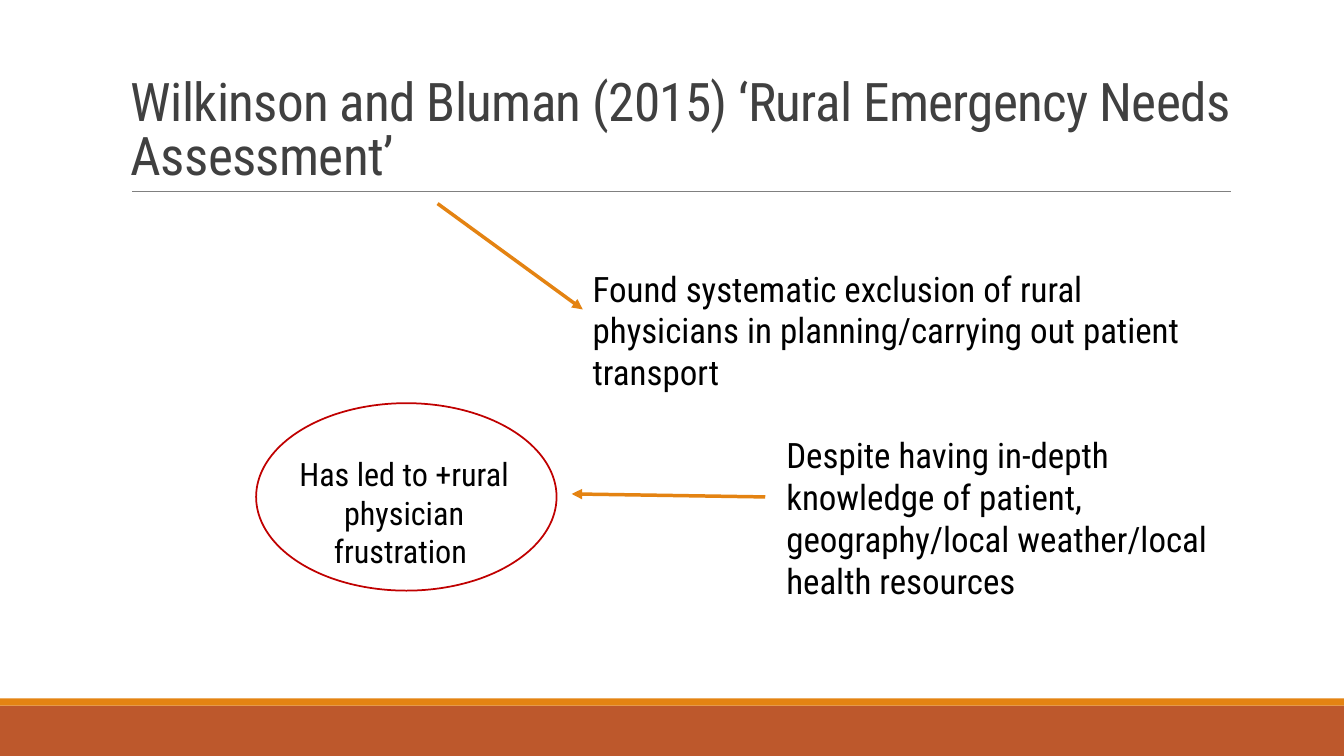
from lxml import etree
from pptx import Presentation
from pptx.dml.color import RGBColor
from pptx.enum.shapes import MSO_CONNECTOR, MSO_SHAPE
from pptx.enum.text import MSO_ANCHOR, MSO_AUTO_SIZE, PP_ALIGN
from pptx.oxml.ns import qn
from pptx.util import Inches, Pt

RECT, OVAL = MSO_SHAPE.RECTANGLE, MSO_SHAPE.OVAL
STRAIGHT = MSO_CONNECTOR.STRAIGHT
TOP, BOTTOM = MSO_ANCHOR.TOP, MSO_ANCHOR.BOTTOM
LEFT, CENTER = PP_ALIGN.LEFT, PP_ALIGN.CENTER
GROW, FIXED = MSO_AUTO_SIZE.SHAPE_TO_FIT_TEXT, MSO_AUTO_SIZE.NONE

RUST, ORANGE, RED = "BD582C", "E48312", "C00000"
GRAY, DARK, BLACK = "808080", "404040", "000000"


def rgb(value):
    return RGBColor.from_string(value)


class SlideBuilder:
    font = "Roboto Condensed"

    def __init__(self, slide):
        self.s = slide

    def shape(self, kind, box, fill=None, line=None, width=1):
        sp = self.s.shapes.add_shape(kind, *map(Inches, box))
        sp.shadow.inherit = False
        if fill:
            sp.fill.solid()
            sp.fill.fore_color.rgb = rgb(fill)
        else:
            sp.fill.background()
        if line:
            sp.line.color.rgb = rgb(line)
            sp.line.width = Pt(width)
        else:
            sp.line.fill.background()

    def line(self, start, end, color, width, arrow=False):
        cx = self.s.shapes.add_connector(STRAIGHT, *map(Inches, start + end))
        cx.line.color.rgb = rgb(color)
        cx.line.width = Pt(width)
        if arrow:
            ln = cx.line._get_or_add_ln()
            etree.SubElement(ln, qn("a:tailEnd"), type="triangle")
        etree.SubElement(cx._element.spPr, qn("a:effectLst"))

    def text(self, box, text, size, color=BLACK, align=LEFT, anchor=TOP,
             fit=GROW, leading=None, tracking=None):
        tf = self.s.shapes.add_textbox(*map(Inches, box)).text_frame
        p = tf.paragraphs[0]
        r = p.add_run()
        r.text = text
        formats = (
            (tf, {"word_wrap": True, "auto_size": fit,
                  "vertical_anchor": anchor}),
            (p, {"alignment": align, "line_spacing": leading}),
            (r.font, {"name": self.font, "size": Pt(size)}),
        )
        for target, values in formats:
            for name, value in values.items():
                setattr(target, name, value)
        r.font.color.rgb = rgb(color)
        if tracking:
            r._r.get_or_add_rPr().set("spc", str(round(tracking * 100)))


def main():
    prs = Presentation()
    prs.slide_width, prs.slide_height = Inches(13.33), Inches(7.5)
    b = SlideBuilder(prs.slides.add_slide(prs.slide_layouts[6]))

    # Footer bands and title rule
    b.shape(RECT, (0, 7, 13.33, 0.5), fill=RUST)
    b.shape(RECT, (0, 6.93, 13.33, 0.07), fill=ORANGE)
    b.line((1.31, 1.9), (12.21, 1.9), GRAY, 0.5)

    # Title
    b.text((1.2, 0.31, 12.13, 1.59),
           "Wilkinson and Bluman (2015) ‘Rural Emergency Needs Assessment’",
           38, DARK, anchor=BOTTOM, fit=FIXED, leading=0.85, tracking=-0.5)

    # Finding and its context
    b.line((4.34, 2.02), (5.78, 3.07), ORANGE, 2.5, arrow=True)
    b.text((5.78, 2.6, 6.26, 0.94),
           "Found systematic exclusion of rural physicians in "
           "planning/carrying out patient transport", 25)
    b.text((7.7, 4.25, 4.58, 1.36),
           "Despite having in-depth knowledge of patient, "
           "geography/local weather/local health resources", 25)

    # Circled outcome
    b.text((2.68, 4.46, 2.66, 0.88),
           "Has led to +rural physician frustration ", 23, align=CENTER)
    b.shape(OVAL, (2.54, 4, 2.98, 1.86), line=RED, width=1.25)
    b.line((7.59, 4.93), (5.67, 4.9), ORANGE, 2.5, arrow=True)

    prs.save("out.pptx")


if __name__ == "__main__":
    main()
